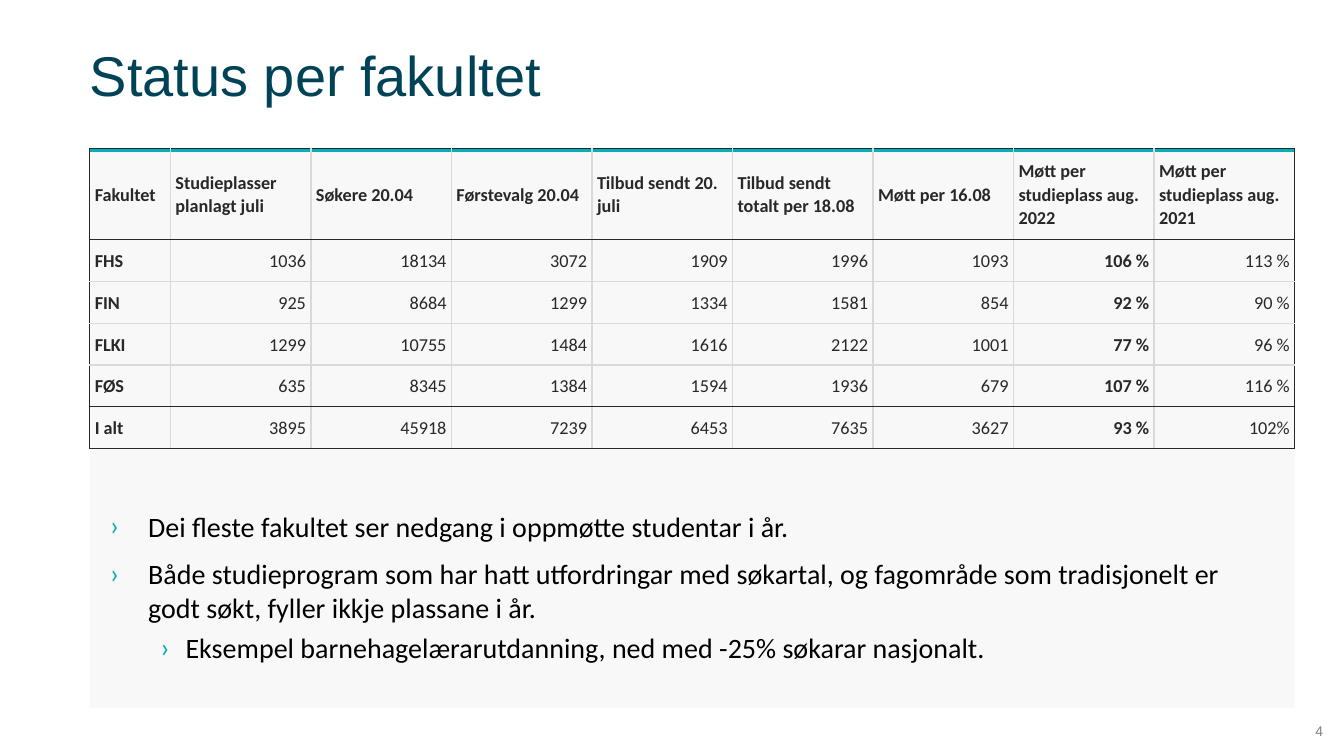
from dataclasses import dataclass

from lxml import etree
from pptx import Presentation
from pptx import util as u
from pptx.dml.color import RGBColor
from pptx.enum import shapes, text
from pptx.oxml import ns


@dataclass(frozen=True)
class Theme:
    head: str = "Arial"
    body: str = "Calibri"
    navy: str = "004357"
    teal: str = "00AFBA"
    ink: str = "282828"
    grid: str = "D9D9D9"
    pale: str = "F2F2F2"
    gray: str = "808080"
    black: str = "000000"
    big: int = 40
    list: int = 20
    cell: int = 13
    small: int = 10


T = Theme()
LEFT, TOP, WIDTH = 89, 149, 1195

ROWS = [
    ["Fakultet", "Studieplasser planlagt juli", "Søkere 20.04",
     "Førstevalg 20.04", "Tilbud sendt 20. juli",
     "Tilbud sendt totalt per 18.08", "Møtt per 16.08",
     "Møtt per studieplass aug. 2022", "Møtt per studieplass aug. 2021"],
    ["FHS", "1036", "18134", "3072", "1909", "1996", "1093", "106 %", "113 %"],
    ["FIN", "925", "8684", "1299", "1334", "1581", "854", "92 %", "90 %"],
    ["FLKI", "1299", "10755", "1484", "1616", "2122", "1001", "77 %", "96 %"],
    ["FØS", "635", "8345", "1384", "1594", "1936", "679", "107 %", "116 %"],
    ["I alt", "3895", "45918", "7239", "6453", "7635", "3627", "93 %", "102%"],
]

POINTS = [
    (0, "Dei fleste fakultet ser nedgang i oppmøtte studentar i år."),
    (0, "Både studieprogram som har hatt utfordringar med søkartal, og "
        "fagområde som tradisjonelt er godt søkt, fyller ikkje plassane i år."),
    (1, "Eksempel barnehagelærarutdanning, ned med -25% søkarar nasjonalt."),
]


def px(n):
    """One px is a hundredth of an inch."""
    return u.Emu(round(n * 9144))


def rgb(code):
    return RGBColor.from_string(code)


def node(root, tag, **attrs):
    return etree.SubElement(root, ns.qn(tag), attrs)


def place(shape, x, y, w, h):
    shape.left, shape.top, shape.width, shape.height = map(px, (x, y, w, h))


def frame(tf, pad, anchor):
    tf.word_wrap = True
    tf.auto_size = text.MSO_AUTO_SIZE.NONE
    tf.vertical_anchor = anchor
    tf.margin_left = tf.margin_right = px(pad)
    tf.margin_top = tf.margin_bottom = px(pad)


def add_run(para, words, font, size, color, bold=False):
    run = para.add_run()
    run.text = words
    run.font.name = font
    run.font.size = u.Pt(size)
    run.font.bold = bold
    run.font.color.rgb = rgb(color)


def add_panel(slide, x, y, w, h):
    panel = slide.shapes.add_shape(
        shapes.MSO_SHAPE.RECTANGLE, *map(px, (x, y, w, h)))
    panel.shadow.inherit = False
    panel.line.fill.background()
    panel.fill.solid()
    panel.fill.fore_color.rgb = rgb(T.pale)
    color = next(panel.element.spPr.iter(ns.qn("a:srgbClr")))
    node(color, "a:alpha", val="50000")
    return panel


def add_rule(slide, x, y, w):
    rule = slide.shapes.add_connector(
        shapes.MSO_CONNECTOR.STRAIGHT, px(x), px(y), px(x + w), px(y))
    rule.line.color.rgb = rgb(T.teal)
    rule.line.width = u.Pt(2)
    node(rule.element.spPr, "a:effectLst")
    return rule


def set_title(shape, words):
    place(shape, LEFT, 0, WIDTH, 148)
    frame(shape.text_frame, 0, text.MSO_ANCHOR.MIDDLE)
    para = shape.text_frame.paragraphs[0]
    para.alignment = text.PP_ALIGN.LEFT
    add_run(para, words, T.head, T.big, T.navy)


def add_bullet(para, level):
    props = para._p.get_or_add_pPr()
    margin, hang = ((38, 38), (75, 25))[level]
    props.set("marL", str(px(margin)))
    props.set("indent", str(-px(hang)))
    node(node(props, "a:buClr"), "a:srgbClr", val=T.teal)
    node(props, "a:buFont", typeface=T.body)
    node(props, "a:buChar", char="›")


def set_list(shape, points):
    place(shape, LEFT, 485, WIDTH, 217)
    tf = shape.text_frame
    frame(tf, 20, text.MSO_ANCHOR.TOP)
    for i, (level, words) in enumerate(points):
        para = tf.add_paragraph() if i else tf.paragraphs[0]
        para.level = level
        add_bullet(para, level)
        para.space_before = u.Pt((10, 5)[level])
        add_run(para, words, T.body, T.list, T.black)


def set_edges(cell, dark):
    """Draw all four borders; the sides named in dark use ink."""
    props = cell._tc.get_or_add_tcPr()
    for i, side in enumerate("LRTB"):
        edge = etree.Element(ns.qn("a:ln" + side), w=str(u.Pt(1)))
        color = T.ink if side in dark else T.grid
        node(node(edge, "a:solidFill"), "a:srgbClr", val=color)
        props.insert(i, edge)


def add_cell(cell, words, bold, right):
    cell.fill.background()
    cell.vertical_anchor = text.MSO_ANCHOR.MIDDLE
    cell.margin_left = cell.margin_right = px(5)
    cell.margin_top = cell.margin_bottom = px(1)
    para = cell.text_frame.paragraphs[0]
    para.alignment = text.PP_ALIGN.RIGHT if right else text.PP_ALIGN.LEFT
    para.line_spacing = 1.07
    para.space_after = u.Pt(8)
    add_run(para, words, T.body, T.cell, T.ink, bold)


def add_grid(slide, rows, x, y, w, h):
    last, end = len(rows) - 1, len(rows[0]) - 1
    table = slide.shapes.add_table(
        last + 1, end + 1, *map(px, (x, y, w, h))).table
    table.first_row = table.horz_banding = False
    first, head = 80, 91
    for c, col in enumerate(table.columns):
        col.width = px((w - first) / end if c else first)
    for r, row in enumerate(table.rows):
        row.height = px((h - head) / last if r else head)
    for r, line in enumerate(rows):
        for c, words in enumerate(line):
            cell = table.cell(r, c)
            bold = r == 0 or c in (0, end - 1)
            add_cell(cell, words, bold, r > 0 and c > 0)
            sides = {"L": c == 0, "R": c == end,
                     "T": r in (0, 1, last), "B": r in (0, last - 1, last)}
            set_edges(cell, [s for s in sides if sides[s]])


def add_page(slide, words):
    box = slide.shapes.add_textbox(*map(px, (1284, 701, 49, 49)))
    frame(box.text_frame, 0, text.MSO_ANCHOR.MIDDLE)
    para = box.text_frame.paragraphs[0]
    para.alignment = text.PP_ALIGN.CENTER
    add_run(para, words, T.head, T.small, T.gray)


def main():
    deck = Presentation()
    deck.slide_width, deck.slide_height = u.Inches(13.33), u.Inches(7.5)
    slide = deck.slides.add_slide(deck.slide_layouts[1])
    title, body = slide.placeholders

    # Backdrop, kept behind the text
    panel = add_panel(slide, LEFT, TOP, WIDTH, 553)
    rule = add_rule(slide, LEFT, TOP, WIDTH)
    for part in (panel, rule):
        title.element.addprevious(part.element)

    # Title, bullets and page number
    set_title(title, "Status per fakultet")
    set_list(body, POINTS)
    add_page(slide, "4")

    # Figures per faculty
    add_grid(slide, ROWS, LEFT, 147, WIDTH, 298)
    deck.save("out.pptx")


if __name__ == "__main__":
    main()
